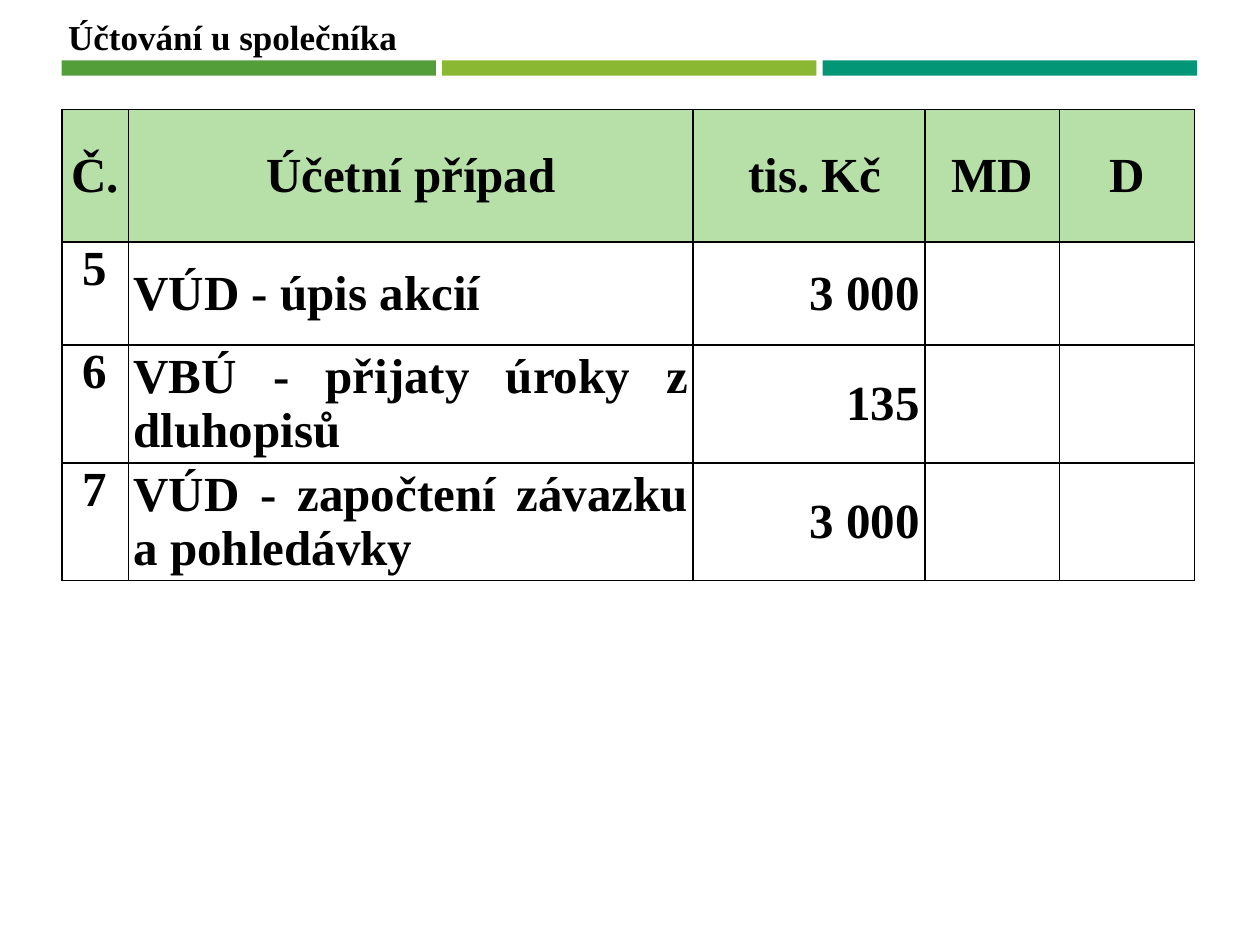
import pptx
import pptx.util
import pptx.dml.color
import pptx.enum.shapes
import pptx.enum.text
import pptx.oxml.ns
from lxml import etree

Inches = pptx.util.Inches
Align = pptx.enum.text.PP_ALIGN
Anchor = pptx.enum.text.MSO_ANCHOR

COLORS = {
    "text": "000000",
    "border": "000000",
    "header": "B7E0A8",
    "bar_green": "549E39",
    "bar_lime": "8AB833",
    "bar_teal": "029676",
}
FONT = {"name": "Times New Roman", "bold": True}
CELL_FORMAT = {
    "margin_left": Inches(0.04),
    "margin_right": Inches(0.04),
    "margin_top": 0,
    "margin_bottom": 0,
}
TITLE_FRAME = {
    "word_wrap": False,
    "auto_size": pptx.enum.text.MSO_AUTO_SIZE.SHAPE_TO_FIT_TEXT,
    "vertical_anchor": Anchor.TOP,
}
TITLE_PLACE = {
    "left": Inches(0.44),
    "top": Inches(0.07),
    "width": Inches(2.83),
    "height": Inches(0.44),
}
COLUMN_WIDTHS = [0.53, 4.48, 1.84, 1.07, 1.07]
ROW_HEIGHTS = [1.05, 0.82, 0.93, 0.93]
BODY_ALIGNMENTS = [Align.CENTER, Align.JUSTIFY, Align.RIGHT, Align.CENTER, Align.CENTER]
ENTRIES = [
    ["Č.", "Účetní případ", " tis. Kč", "MD", "D"],
    ["5", "VÚD - úpis akcií", "3 000", "", ""],
    ["6", "VBÚ - přijaty úroky z dluhopisů", "135", "", ""],
    ["7", "VÚD - započtení závazku a pohledávky", "3 000", "", ""],
]


def color(key):
    return pptx.dml.color.RGBColor.from_string(COLORS[key])


def apply_format(target, values):
    for attribute, value in values.items():
        setattr(target, attribute, value)


def write(frame, text, size, alignment):
    frame.text = text
    paragraph = frame.paragraphs[0]
    paragraph.alignment = alignment
    font = paragraph.runs[0].font if text else paragraph.font
    apply_format(font, {**FONT, "size": pptx.util.Pt(size)})
    font.color.rgb = color("text")


def add_title(slide):
    title = slide.shapes.title
    apply_format(title, TITLE_PLACE)
    apply_format(title.text_frame, TITLE_FRAME)
    write(title.text_frame, "Účtování u společníka", 20, Align.LEFT)


def add_bars(slide):
    for index, key in enumerate(["bar_green", "bar_lime", "bar_teal"]):
        bar = slide.shapes.add_shape(
            pptx.enum.shapes.MSO_SHAPE.RECTANGLE,
            Inches(0.49 + index * 3.02), Inches(0.48), Inches(2.97), Inches(0.12))
        bar.shadow.inherit = False
        bar.fill.solid()
        bar.fill.fore_color.rgb = color(key)
        bar.line.fill.background()


def add_borders(cell):
    properties = cell._tc.get_or_add_tcPr()
    qn = pptx.oxml.ns.qn
    for position, side in enumerate(["a:lnL", "a:lnR", "a:lnT", "a:lnB"]):
        border = etree.Element(qn(side), w=str(pptx.util.Pt(1)))
        fill = etree.SubElement(border, qn("a:solidFill"))
        etree.SubElement(fill, qn("a:srgbClr"), val=COLORS["border"])
        properties.insert(position, border)


def fill_cell(cell, text, is_header, column):
    alignment = Align.CENTER if is_header else BODY_ALIGNMENTS[column]
    write(cell.text_frame, text, 28, alignment)
    apply_format(cell, CELL_FORMAT)
    is_entry_number = column == 0 and not is_header
    cell.vertical_anchor = Anchor.TOP if is_entry_number else Anchor.MIDDLE
    if is_header:
        cell.fill.solid()
        cell.fill.fore_color.rgb = color("header")
    else:
        cell.fill.background()
    add_borders(cell)


def add_ledger(slide):
    ledger = slide.shapes.add_table(
        len(ROW_HEIGHTS), len(COLUMN_WIDTHS), Inches(0.49), Inches(0.87),
        Inches(sum(COLUMN_WIDTHS)), Inches(sum(ROW_HEIGHTS))).table
    apply_format(ledger, {"first_row": False, "horz_banding": False})
    for column, width in zip(ledger.columns, COLUMN_WIDTHS):
        column.width = Inches(width)
    for row, height in zip(ledger.rows, ROW_HEIGHTS):
        row.height = Inches(height)
    for row_index, entry in enumerate(ENTRIES):
        for column_index, text in enumerate(entry):
            fill_cell(ledger.cell(row_index, column_index), text,
                      row_index == 0, column_index)


def main():
    deck = pptx.Presentation()
    apply_format(deck, {"slide_width": Inches(10), "slide_height": Inches(7.5)})
    slide = deck.slides.add_slide(deck.slide_layouts[5])
    add_bars(slide)
    add_title(slide)
    add_ledger(slide)
    deck.save("out.pptx")


if __name__ == "__main__":
    main()
